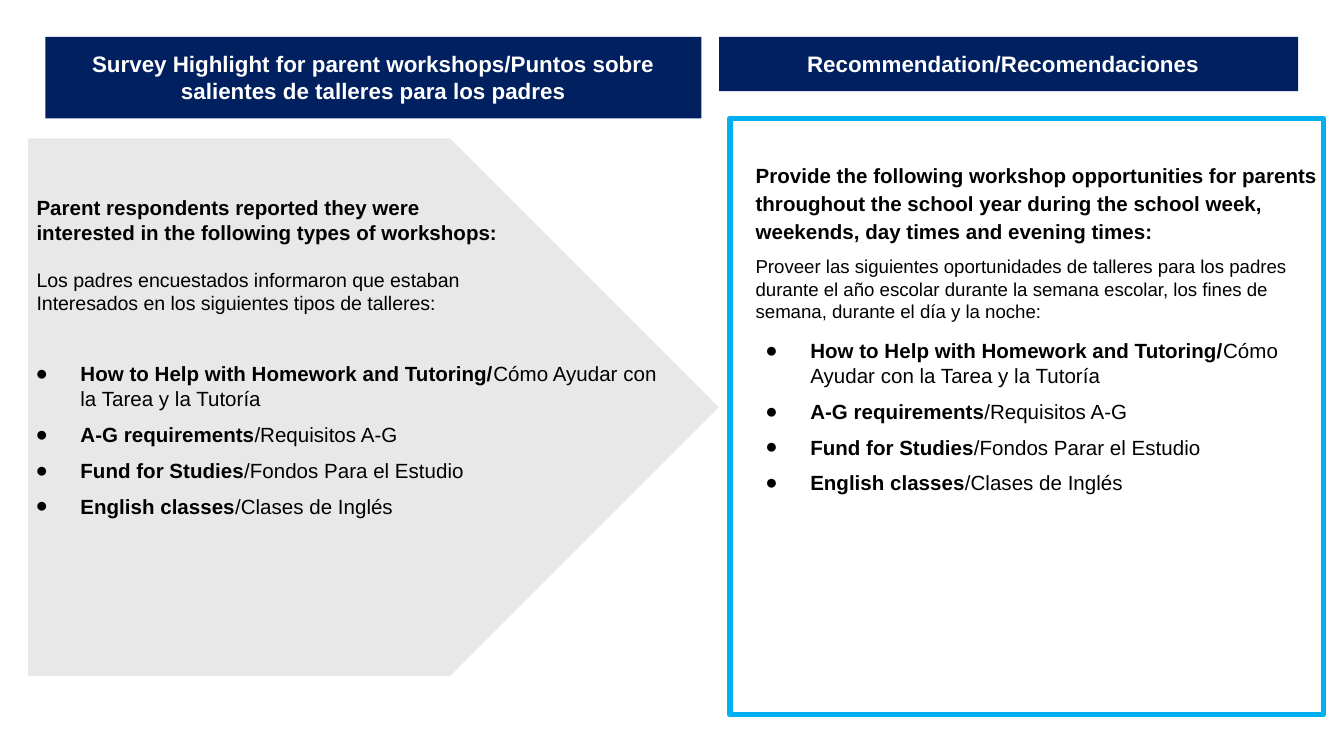
"""Build a slide of parent workshop survey results and recommendations."""
from lxml import etree
from pptx import Presentation
from pptx.dml.color import RGBColor
from pptx.enum.shapes import MSO_SHAPE
from pptx.enum.text import MSO_ANCHOR, PP_ALIGN
from pptx.oxml.ns import qn
from pptx.util import Pt

RECT = MSO_SHAPE.RECTANGLE
ARROW = MSO_SHAPE.PENTAGON
TOP = MSO_ANCHOR.TOP
MIDDLE = MSO_ANCHOR.MIDDLE
LEFT = PP_ALIGN.LEFT
CENTER = PP_ALIGN.CENTER
NAVY = RGBColor(0x00, 0x20, 0x60)
SKY = RGBColor(0x00, 0xB0, 0xF0)
GRAY = RGBColor(0xE8, 0xE8, 0xE8)
BLACK = RGBColor(0x00, 0x00, 0x00)
WHITE = RGBColor(0xFF, 0xFF, 0xFF)


class Page:
    """Hold the text style and the current slide."""

    font = "Arial"
    size = 11

    def __init__(self, deck):
        self.slide = deck.slides.add_slide(deck.slide_layouts[6])

    def shape(self, kind, box, fill=None, line=None):
        item = self.slide.shapes.add_shape(kind, *map(Pt, box))
        item.shadow.inherit = False
        if fill is None:
            item.fill.background()
        else:
            item.fill.solid()
            item.fill.fore_color.rgb = fill
        if line is None:
            item.line.fill.background()
        else:
            item.line.color.rgb = line
            item.line.width = Pt(3)
        return item

    def text(self, box):
        return self.slide.shapes.add_textbox(*map(Pt, box))

    def frame(self, item, top=7.2, right=7.2, anchor=TOP):
        body = item.text_frame
        body.word_wrap = True
        body.vertical_anchor = anchor
        body.margin_left = body.margin_bottom = Pt(7.2)
        body.margin_top, body.margin_right = Pt(top), Pt(right)
        return body

    def para(self, body, runs, size=size, color=BLACK, align=LEFT,
             before=0, space=1.0, left=12.5, hang=0):
        first = body.paragraphs[0]
        para = body.add_paragraph() if first.runs else first
        para.alignment = align
        para.space_before = Pt(before)
        para.line_spacing = space
        props = para._p.get_or_add_pPr()
        props.set("marL", str(Pt(left)))
        props.set("indent", str(Pt(-hang)))
        for words, bold in runs:
            run = para.add_run()
            run.text = words
            run.font.name = self.font
            run.font.size = Pt(size)
            run.font.bold = bold
            run.font.color.rgb = color
        return props

    def bullets(self, body, rows, gap=6):
        for i, (head, tail) in enumerate(rows):
            props = self.para(body, [(head, True), (tail, False)],
                              before=6 if i else gap, left=36, hang=24)
            tint = etree.SubElement(props, qn("a:buClr"))
            etree.SubElement(tint, qn("a:srgbClr"), val=str(BLACK))
            etree.SubElement(props, qn("a:buFont"), typeface=self.font)
            etree.SubElement(props, qn("a:buChar"), char="●")

    def header(self, box, words, right=7.2):
        body = self.frame(self.shape(RECT, box, NAVY), right=right)
        self.para(body, [(words, True)], 12, WHITE, CENTER, left=0)


def topics(fund):
    return [
        ("How to Help with Homework and Tutoring/",
         "Cómo Ayudar con la Tarea y la Tutoría"),
        ("A-G requirements", "/Requisitos A-G"),
        ("Fund for Studies", fund),
        ("English classes", "/Clases de Inglés"),
    ]


def main():
    deck = Presentation()
    deck.slide_width, deck.slide_height = Pt(720), Pt(405)
    page = Page(deck)

    page.shape(ARROW, (15.1, 74.2, 370.1, 288), GRAY)
    survey = page.frame(page.text((0, 84.2, 360.7, 291.6)), top=20.3)
    page.para(survey, [("Parent respondents reported they were", True)])
    page.para(survey, [("interested in the following types of workshops:", True)])
    page.para(survey, [("Los padres encuestados informaron que estaban", False)],
              10.5, before=12.5)
    page.para(survey, [("Interesados en los siguientes tipos de talleres:", False)], 10.5)
    page.bullets(survey, topics("/Fondos Para el Estudio"), gap=25)

    advice = page.frame(page.text((385.2, 52.6, 329.8, 347.8)), top=32.5)
    page.para(advice, [("Provide the following workshop opportunities for parents "
                        "throughout the school year during the school week, "
                        "weekends, day times and evening times:", True)], space=1.15)
    page.para(advice, [("Proveer las siguientes oportunidades de talleres para los "
                        "padres durante el año escolar durante la semana escolar, los "
                        "fines de semana, durante el día y la noche:", False)],
              10, before=6)

    page.header((24.3, 19.8, 351.4, 43.7),
                "Survey Highlight for parent workshops/Puntos sobre "
                "salientes de talleres para los padres")
    page.header((385.2, 19.8, 310.3, 29), "Recommendation/Recomendaciones", right=13)

    panel = page.shape(RECT, (391, 63.4, 318, 319.5), line=SKY)
    page.bullets(page.frame(panel, anchor=MIDDLE), topics("/Fondos Parar el Estudio"))
    deck.save("out.pptx")


if __name__ == "__main__":
    main()
